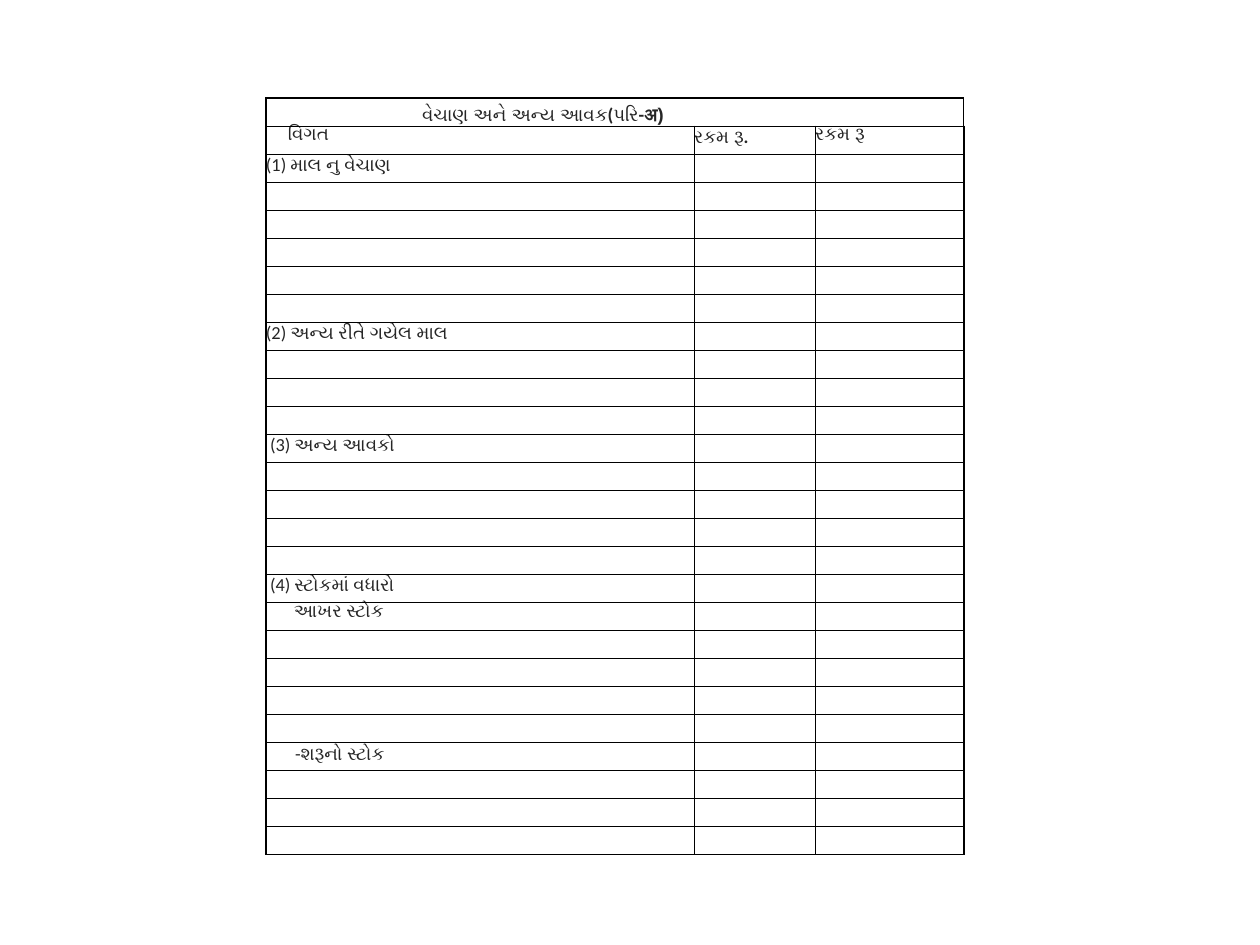
from lxml.etree import SubElement
from pptx import Presentation
from pptx.dml.color import RGBColor
from pptx.enum.text import MSO_ANCHOR, PP_ALIGN
from pptx.oxml.ns import qn
from pptx.util import Emu, Pt

# Content: (row, column) -> (text, indent in px)
TITLE_RUNS = [("વેચાણ અને અન્ય આવક(પરિ-", "Calibri"), ("अ)", "Arial")]
HEADINGS = [("વિગત", 22), ("રકમ રૂ.", 0), ("રકમ રૂ", 0)]
ENTRIES = {
    2: ("(1) માલ નુ વેચાણ", 0),
    8: ("(2) અન્ય રીતે ગયેલ માલ", 0),
    12: ("(3) અન્ય આવકો", 4),
    17: ("(4) સ્ટોકમાં વધારો", 4),
    18: ("આખર સ્ટોક", 28),
    23: ("-શરૂનો સ્ટોક", 29),
}
ROW_COUNT = 27
COLUMN_WIDTHS = [428, 121, 121]
LEFT, TOP, HEIGHT = 266, 98, 758
TITLE_RIGHT_MARGIN = 144

TEXT_COLOR = RGBColor(0x26, 0x26, 0x26)
BORDER_COLOR = RGBColor(0x00, 0x00, 0x00)
FONT_SIZE = Pt(10.5)
THIN, THICK = Pt(0.5), Pt(1)


def px(count):
    return Emu(round(count * 914400 / 126))


def add_run(paragraph, text, font_name, bold):
    run = paragraph.add_run()
    run.text = text
    run.font.name = font_name
    run.font.size = FONT_SIZE
    run.font.bold = bold
    run.font.color.rgb = TEXT_COLOR


def set_borders(cell, widths):
    properties = cell._tc.get_or_add_tcPr()
    for position, (side, width) in enumerate(widths.items()):
        line = SubElement(properties, qn(f"a:ln{side}"), w=str(width))
        fill = SubElement(line, qn("a:solidFill"))
        SubElement(fill, qn("a:srgbClr"), val=str(BORDER_COLOR))
        properties.insert(position, line)


def write_entry(cell, text, indent, bold):
    paragraph = cell.text_frame.paragraphs[0]
    paragraph._p.get_or_add_pPr().set("marL", str(px(indent)))
    add_run(paragraph, text, "Calibri", bold)


presentation = Presentation()
presentation.slide_width, presentation.slide_height = px(1260), px(945)
slide = presentation.slides.add_slide(presentation.slide_layouts[6])

# Table grid
table = slide.shapes.add_table(
    ROW_COUNT, len(COLUMN_WIDTHS),
    px(LEFT), px(TOP), px(sum(COLUMN_WIDTHS)), px(HEIGHT),
).table
table.first_row = table.horz_banding = False
for column, width in zip(table.columns, COLUMN_WIDTHS):
    column.width = px(width)
for row in table.rows:
    row.height = px(HEIGHT / ROW_COUNT)

# Cell format: no fill, no margins, heavier outer edges
last_column = len(COLUMN_WIDTHS) - 1
for row_index, row in enumerate(table.rows):
    for column_index, cell in enumerate(row.cells):
        cell.fill.background()
        cell.margin_left = cell.margin_right = 0
        cell.margin_top = cell.margin_bottom = 0
        is_title = row_index == 0
        set_borders(cell, {
            "L": THICK if column_index == 0 else THIN,
            "R": THICK if column_index == last_column and not is_title else THIN,
            "T": THICK if is_title else THIN,
            "B": THIN,
        })
        # Keeps empty rows from growing
        SubElement(cell.text_frame.paragraphs[0]._p, qn("a:endParaRPr"),
                   sz=str(int(FONT_SIZE.pt * 100)))

# Title row
title_cell = table.cell(0, 0)
title_cell.merge(table.cell(0, last_column))
title_cell.vertical_anchor = MSO_ANCHOR.BOTTOM
title_cell.margin_right = px(TITLE_RIGHT_MARGIN)
title_paragraph = title_cell.text_frame.paragraphs[0]
title_paragraph.alignment = PP_ALIGN.CENTER
for text, font_name in TITLE_RUNS:
    add_run(title_paragraph, text, font_name, True)

# Headings and entries
for column_index, (text, indent) in enumerate(HEADINGS):
    write_entry(table.cell(1, column_index), text, indent, True)
for row_index, (text, indent) in ENTRIES.items():
    write_entry(table.cell(row_index, 0), text, indent, False)

presentation.save("out.pptx")
